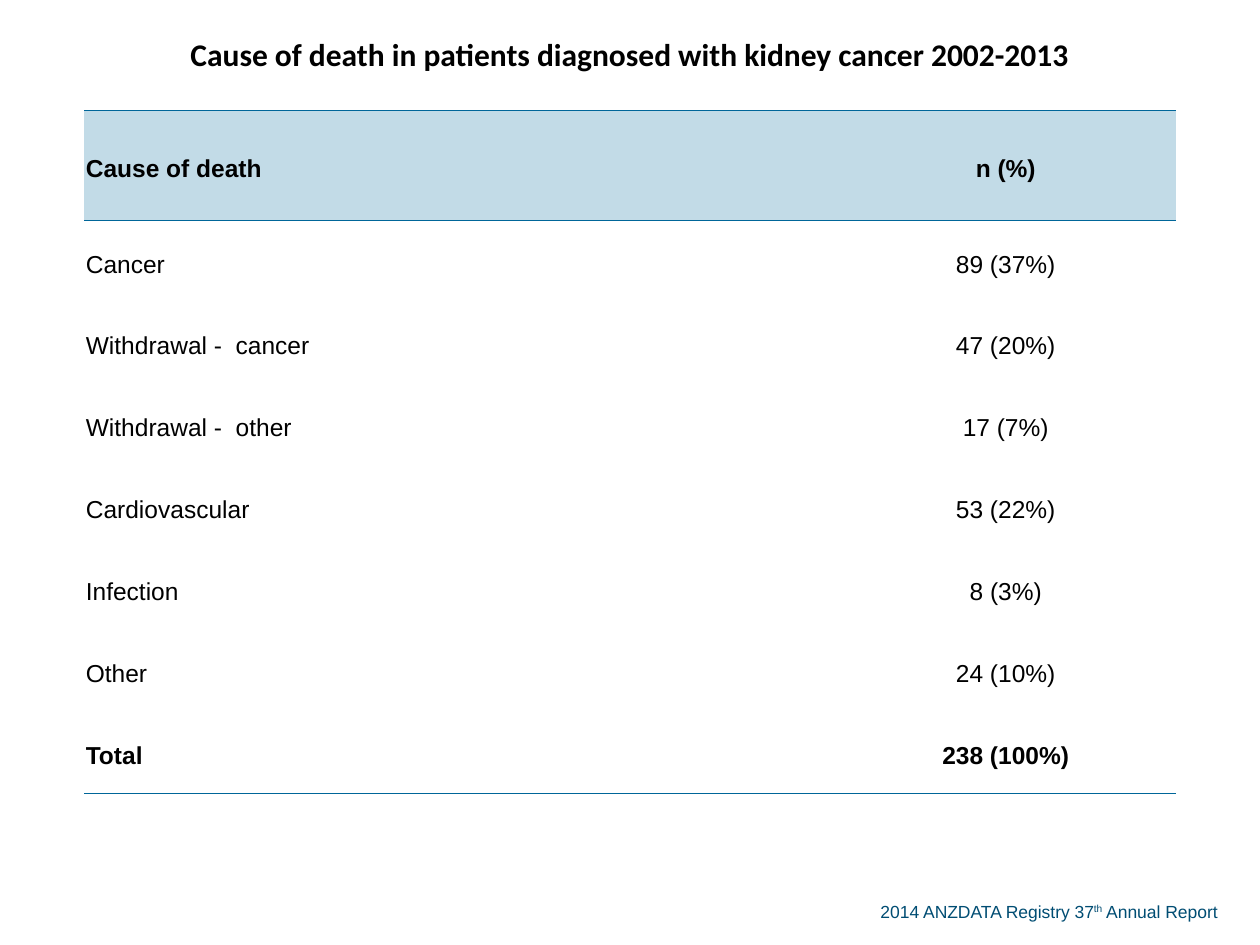
from lxml import etree
from pptx import Presentation
from pptx.dml.color import RGBColor
from pptx.enum.text import MSO_ANCHOR, MSO_AUTO_SIZE, PP_ALIGN
from pptx.oxml.ns import qn
from pptx.util import Cm, Pt

LEFT, MID = PP_ALIGN.LEFT, PP_ALIGN.CENTER
CENTRE = MSO_ANCHOR.MIDDLE
GROW = MSO_AUTO_SIZE.SHAPE_TO_FIT_TEXT
BLACK = RGBColor(0x00, 0x00, 0x00)
NAVY = RGBColor(0x00, 0x4D, 0x73)
BLUE = RGBColor(0x00, 0x66, 0x99)
PALE = RGBColor(0xC2, 0xDB, 0xE7)

TITLE = "Cause of death in patients diagnosed with kidney cancer 2002-2013"
ROWS = [
    ("Cause of death", "n (%)"),
    ("Cancer", "89 (37%)"),
    ("Withdrawal -  cancer", "47 (20%)"),
    ("Withdrawal -  other", "17 (7%)"),
    ("Cardiovascular", "53 (22%)"),
    ("Infection", "8 (3%)"),
    ("Other", "24 (10%)"),
    ("Total", "238 (100%)"),
]
FOOTER = [("2014 ANZDATA Registry 37", 0), ("th", 30000), (" Annual Report", 0)]


def write(para, text, size=14, font="Arial", color=BLACK, bold=False,
          align=LEFT, lines=None, after=None, raised=0):
    para.alignment = align
    if lines:
        para.line_spacing = lines
    if after:
        para.space_after = Pt(after)
    run = para.add_run()
    run.text = text
    run.font.size, run.font.name, run.font.bold = Pt(size), font, bold
    run.font.color.rgb = color
    if raised:
        run.font._element.set("baseline", str(raised))


class Deck:
    def __init__(self):
        self.prs = Presentation()
        self.prs.slide_width, self.prs.slide_height = Cm(25.4), Cm(19.05)
        self.slide = self.prs.slides.add_slide(self.prs.slide_layouts[6])

    def edge(self, cell, ruled):
        props = cell._tc.get_or_add_tcPr()
        for side in "LRTB":
            line = etree.SubElement(props, qn(f"a:ln{side}"), w=str(Pt(0.5)))
            if side in ruled:
                fill = etree.SubElement(line, qn("a:solidFill"))
                etree.SubElement(fill, qn("a:srgbClr"), val=str(BLUE))
            else:
                etree.SubElement(line, qn("a:noFill"))

    def cell(self, cell, ruled, fill=None):
        cell.margin_left = cell.margin_right = cell.margin_top = Cm(0.03)
        cell.margin_bottom = 0
        cell.vertical_anchor = CENTRE
        self.edge(cell, ruled)
        if fill is None:
            cell.fill.background()
        else:
            cell.fill.solid()
            cell.fill.fore_color.rgb = fill
        return cell.text_frame.paragraphs[0]

    def table(self, title, rows, left, top, widths, tall, low):
        count = len(rows) + 1
        high = 2 * tall + (count - 2) * low
        grid = self.slide.shapes.add_table(
            count, len(widths), Cm(left), Cm(top), Cm(sum(widths)), Cm(high)).table
        grid.first_row = grid.horz_banding = False
        for col, width in zip(grid.columns, widths):
            col.width = Cm(width)
        for i, row in enumerate(grid.rows):
            row.height = Cm(tall if i < 2 else low)
        grid.cell(0, 0).merge(grid.cell(0, len(widths) - 1))
        for j in range(len(widths)):
            para = self.cell(grid.cell(0, j), "B")
            if j == 0:
                write(para, title, size=18, font="Calibri", bold=True, align=MID)
        rules = {1: "TB", 2: "T", count - 1: "B"}
        for i, row in enumerate(rows, 1):
            for j, text in enumerate(row):
                para = self.cell(grid.cell(i, j), rules.get(i, ""),
                                 PALE if i == 1 else None)
                write(para, text, bold=i in (1, count - 1),
                      align=MID if j else LEFT, lines=1.19, after=14)

    def note(self, parts, left, top, width, height):
        box = self.slide.shapes.add_textbox(Cm(left), Cm(top), Cm(width), Cm(height))
        frame = box.text_frame
        frame.word_wrap = True
        frame.auto_size = GROW
        for text, raised in parts:
            write(frame.paragraphs[0], text, size=10, color=NAVY, raised=raised)


def main():
    deck = Deck()
    deck.note(FOOTER, 17.5, 18.03, 7.6, 0.69)
    deck.table(TITLE, ROWS, 1.7, 0, (15.15, 6.85), 2.22, 1.65)
    deck.prs.save("out.pptx")


if __name__ == "__main__":
    main()
